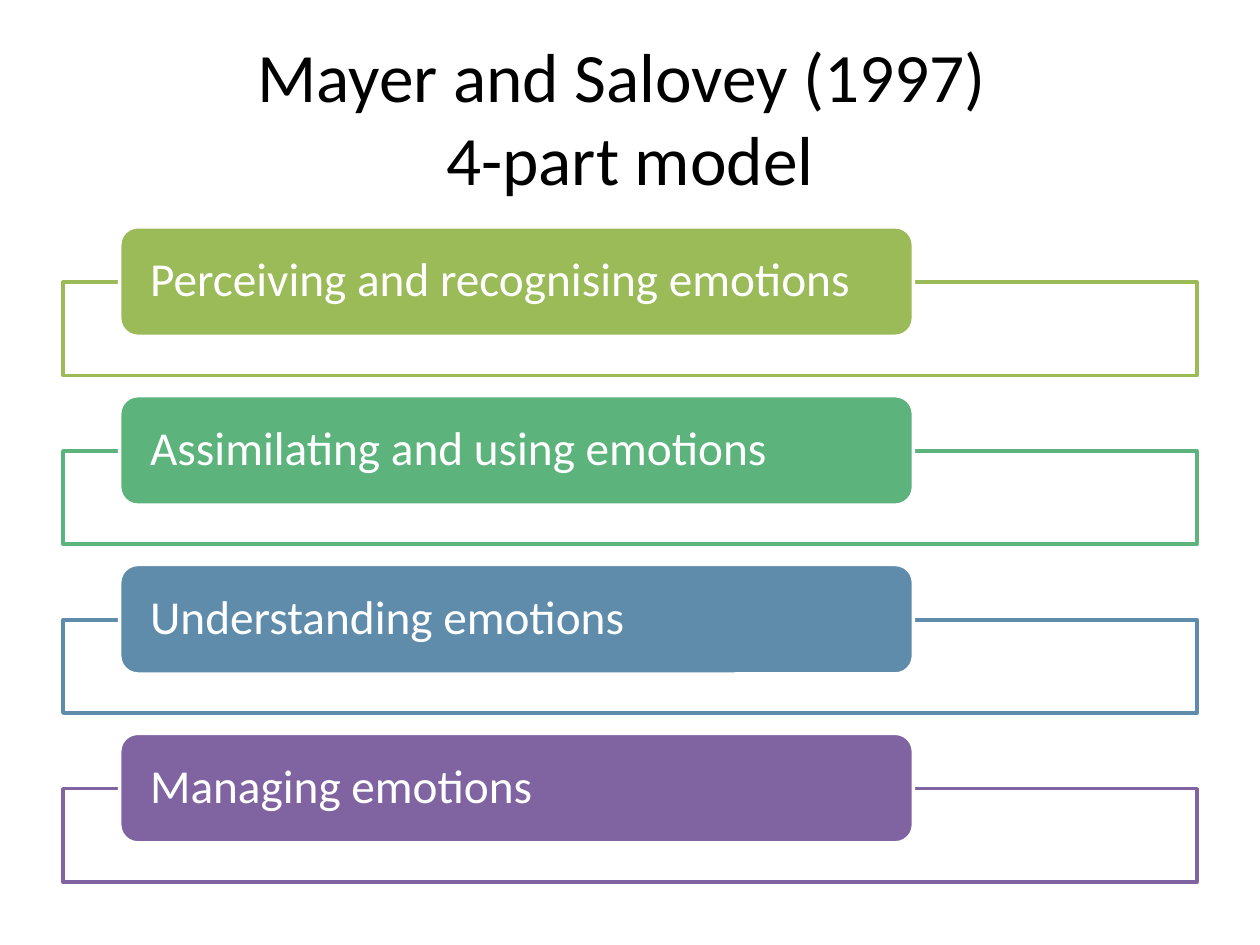
from lxml.etree import SubElement
from pptx import Presentation
from pptx.dml.color import RGBColor
from pptx.enum.shapes import MSO_SHAPE
from pptx.enum.text import MSO_ANCHOR, PP_ALIGN
from pptx.oxml.ns import qn
from pptx.util import Inches, Pt

BLACK = RGBColor(0x00, 0x00, 0x00)
WHITE = RGBColor(0xFF, 0xFF, 0xFF)
GREEN = RGBColor(0x9B, 0xBB, 0x59)
TEAL = RGBColor(0x5C, 0xB3, 0x7C)
BLUE = RGBColor(0x60, 0x8C, 0xAB)
PURPLE = RGBColor(0x80, 0x64, 0xA2)

COLUMNS, ROWS = 100, 75
FIRST_BRANCH_ROW = 18
BRANCH_PITCH = 13.4
FRAME_OFFSET = 4.4
BRANCHES = [
    ("Perceiving and recognising emotions", GREEN),
    ("Assimilating and using emotions", TEAL),
    ("Understanding emotions", BLUE),
    ("Managing emotions", PURPLE),
]


def write_text(shape, text, size, color, align=PP_ALIGN.LEFT, font="Calibri",
               margins=(0.1, 0.05), line_spacing=1.0):
    """Fill a shape with one paragraph; margins are horizontal and vertical inches."""
    frame = shape.text_frame
    frame.word_wrap = True
    frame.vertical_anchor = MSO_ANCHOR.MIDDLE
    frame.margin_left = frame.margin_right = Inches(margins[0])
    frame.margin_top = frame.margin_bottom = Inches(margins[1])
    paragraph = frame.paragraphs[0]
    paragraph.text = text
    paragraph.alignment = align
    paragraph.line_spacing = line_spacing
    for run in paragraph.runs:
        run.font.name = font
        run.font.size = Pt(size)
        run.font.color.rgb = color


class ModelSlide:
    """Holds the grid, the style and the current slide."""

    line_width = Pt(2)
    title_size = 39.6
    label_size = 27

    def __init__(self, presentation):
        self.column = presentation.slide_width / COLUMNS
        self.row = presentation.slide_height / ROWS
        self.slide = presentation.slides.add_slide(presentation.slide_layouts[6])

    def area(self, left, top, width, height):
        """Turn grid columns and rows into slide lengths."""
        return (round(left * self.column), round(top * self.row),
                round(width * self.column), round(height * self.row))

    def title(self, text):
        box = self.slide.shapes.add_textbox(*self.area(5, 3, 90, 12.5))
        write_text(box, text, self.title_size, BLACK, align=PP_ALIGN.CENTER)

    def box(self, kind, area, fill, line):
        shape = self.slide.shapes.add_shape(kind, *self.area(*area))
        shape.shadow.inherit = False
        shape.fill.solid()
        shape.fill.fore_color.rgb = fill
        shape.line.color.rgb = line
        shape.line.width = self.line_width
        return shape

    def frame(self, top, color):
        """Draw an outlined box with a 90% opaque white fill."""
        shape = self.box(MSO_SHAPE.RECTANGLE, (5, top, 90, 7.4), WHITE, color)
        fill_color = shape.fill._xPr.find(qn("a:solidFill"))[0]
        SubElement(fill_color, qn("a:alpha"), val="90000")

    def label(self, text, top, color):
        shape = self.box(MSO_SHAPE.ROUNDED_RECTANGLE, (9.5, top, 63, 8.7), color, WHITE)
        write_text(shape, text, self.label_size, WHITE, margins=(0.2, 0), line_spacing=0.9)

    def branch(self, text, top, color):
        self.frame(top + FRAME_OFFSET, color)
        self.label(text, top, color)


def main():
    presentation = Presentation()
    presentation.slide_width = Inches(10)
    presentation.slide_height = Inches(7.5)
    model = ModelSlide(presentation)
    model.title("Mayer and Salovey (1997) \v4-part model")
    for index, (text, color) in enumerate(BRANCHES):
        model.branch(text, FIRST_BRANCH_ROW + index * BRANCH_PITCH, color)
    presentation.save("out.pptx")


if __name__ == "__main__":
    main()
